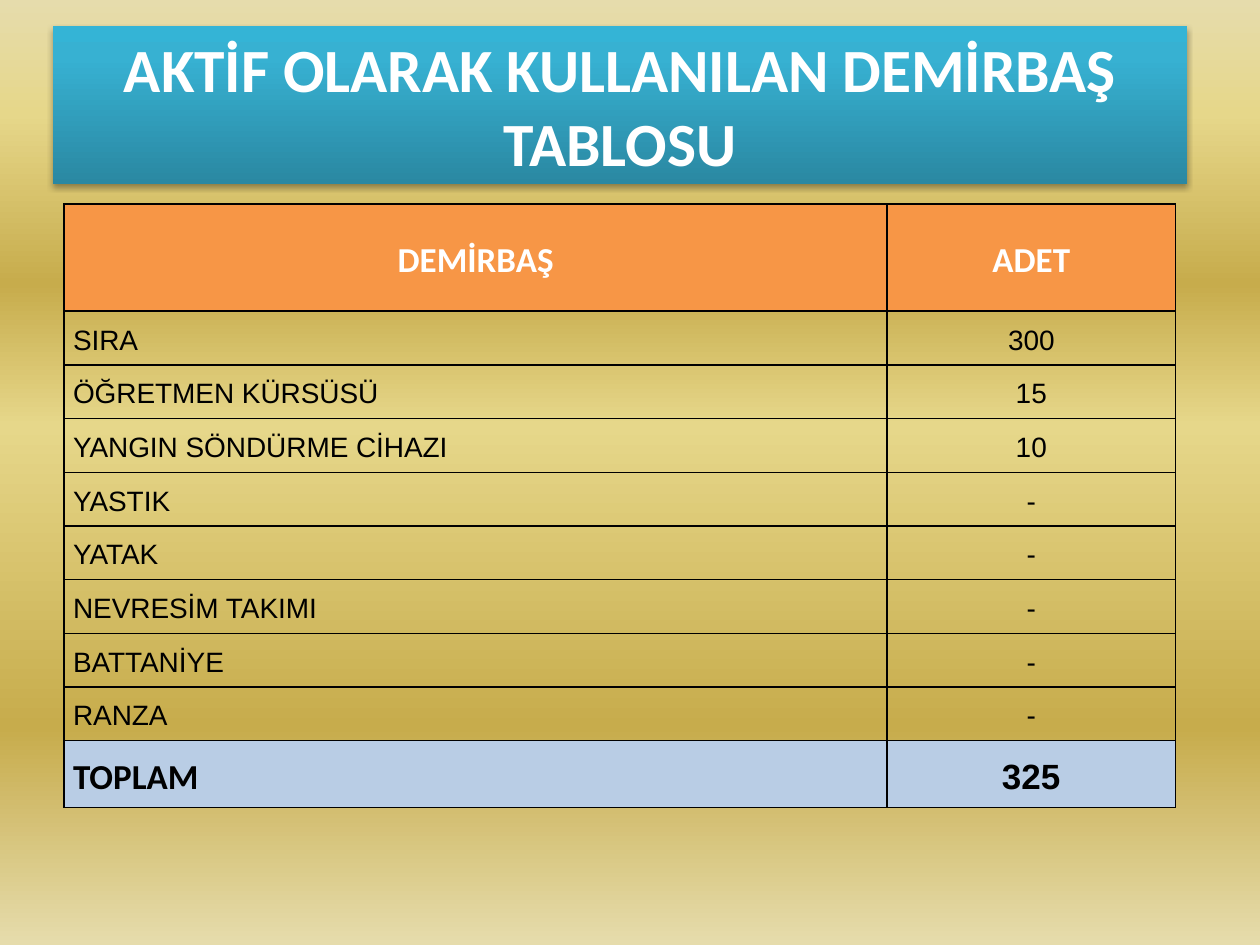
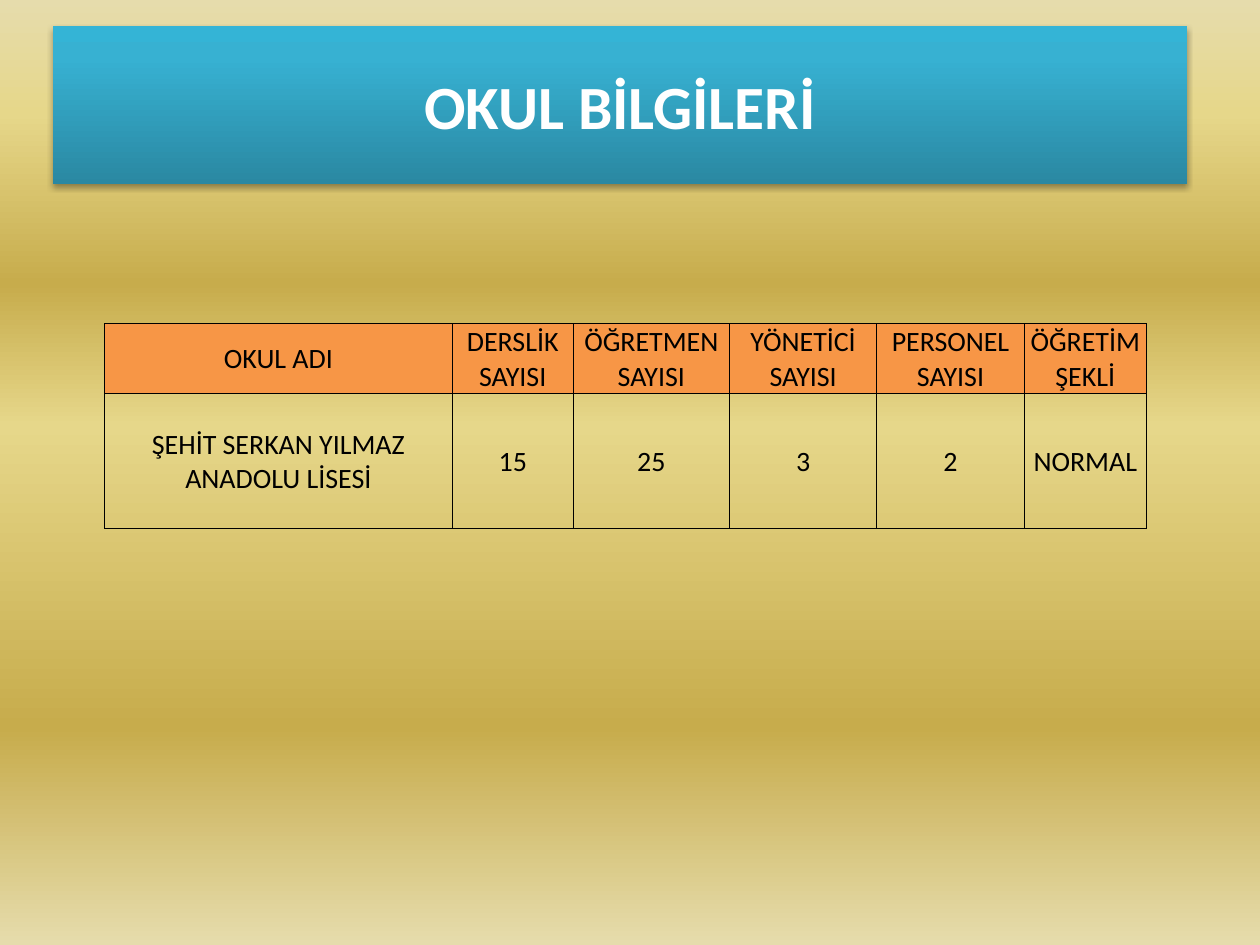
"""Build two slides of school inventory and school facts."""
from dataclasses import dataclass, replace
from typing import Optional

import pptx
import pptx.dml.color
import pptx.enum.shapes
import pptx.enum.text
import pptx.oxml.ns
import pptx.util
from lxml import etree

Inches = pptx.util.Inches
Pt = pptx.util.Pt
RGBColor = pptx.dml.color.RGBColor
Align = pptx.enum.text.PP_ALIGN
Middle = pptx.enum.text.MSO_ANCHOR.MIDDLE
qn = pptx.oxml.ns.qn

BLACK = RGBColor(0x00, 0x00, 0x00)
WHITE = RGBColor(0xFF, 0xFF, 0xFF)
ORANGE = RGBColor(0xF7, 0x96, 0x46)
PALE = RGBColor(0xB9, 0xCD, 0xE5)
CREAM = RGBColor(0xE6, 0xDC, 0xAC)
STRAW = RGBColor(0xE6, 0xD7, 0x8A)
GOLD = RGBColor(0xC7, 0xAC, 0x4C)
TEAL = RGBColor(0x2A, 0x88, 0xA2)
AQUA = RGBColor(0x37, 0xB1, 0xD2)
SKY = RGBColor(0x34, 0xB4, 0xD6)

BACK = [(0, CREAM), (12, STRAW), (30, GOLD), (45, STRAW), (77, GOLD), (100, CREAM)]
BAND = [(0, TEAL), (80, AQUA), (100, SKY)]


@dataclass(frozen=True)
class Look:
    """Style of a run of text and the cell around it."""
    size: float = 16
    font: str = "Calibri"
    bold: bool = False
    ink: RGBColor = BLACK
    fill: Optional[RGBColor] = None
    align: Align = Align.CENTER


@dataclass(frozen=True)
class Cell:
    """Text of one cell with its look."""
    text: str
    look: Look


@dataclass(frozen=True)
class Grid:
    """Place, sizes and content of a table."""
    left: float
    top: float
    cols: list[float]
    rows: list[float]
    cells: list[list[Cell]]
    rule: float
    pads: tuple[float, float, float, float]
    lead: float = 1.0


TITLE = Look(35.1, bold=True, ink=WHITE)
HEAD = Look(20, bold=True, ink=WHITE, fill=ORANGE)
COUNT = Look(font="Arial")
ITEM = replace(COUNT, align=Align.LEFT)
TOTAL = Look(20, bold=True, fill=PALE, align=Align.LEFT)
SUM = replace(TOTAL, font="Arial", align=Align.CENTER)
FACT = Look()
LABEL = replace(FACT, fill=ORANGE)

STOCK = [("SIRA", "300"), ("ÖĞRETMEN KÜRSÜSÜ", "15"), ("YANGIN SÖNDÜRME CİHAZI", "10"),
         ("YASTIK", "-"), ("YATAK", "-"), ("NEVRESİM TAKIMI", "-"),
         ("BATTANİYE", "-"), ("RANZA", "-")]
FACTS = [("OKUL ADI", "ŞEHİT SERKAN YILMAZ ANADOLU LİSESİ", 2.76),
         ("DERSLİK SAYISI", "15", 0.96), ("ÖĞRETMEN SAYISI", "25", 1.24),
         ("YÖNETİCİ SAYISI", "3", 1.17), ("PERSONEL SAYISI", "2", 1.17),
         ("ÖĞRETİM ŞEKLİ", "NORMAL", 0.97)]


def add_color(host: etree.ElementBase, color: RGBColor) -> etree.ElementBase:
    """Add an RGB colour node to a host node."""
    return etree.SubElement(host, qn("a:srgbClr"), val=str(color))


def set_blend(host: etree.ElementBase, stops: list[tuple[int, RGBColor]], angle: int) -> None:
    """Give the gradient found in a host its stops and angle."""
    grad = host.find(".//" + qn("a:gradFill"))
    holder = grad.find(qn("a:gsLst"))
    for old in list(holder):
        holder.remove(old)
    for place, color in stops:
        add_color(etree.SubElement(holder, qn("a:gs"), pos=str(place * 1000)), color)
    grad.find(qn("a:lin")).set("ang", str(angle * 60000))


def write(frame: pptx.text.text.TextFrame, text: str, look: Look, lead: float = 1.0) -> None:
    """Write one styled run into a text frame."""
    para = frame.paragraphs[0]
    para.alignment = look.align
    para.line_spacing = lead
    run = para.add_run()
    run.text = text
    run.font.size = Pt(look.size)
    run.font.name = look.font
    run.font.bold = look.bold
    run.font.color.rgb = look.ink


def add_page(deck: pptx.presentation.Presentation, title: str) -> pptx.slide.Slide:
    """Add a slide with the shared background and title band."""
    page = deck.slides.add_slide(deck.slide_layouts[6])
    page.background.fill.gradient()
    set_blend(page.background.element if hasattr(page.background, "element") else page.element,
              BACK, 90)
    band = page.shapes.add_shape(pptx.enum.shapes.MSO_SHAPE.RECTANGLE,
                                 Inches(0.42), Inches(0.21), Inches(9), Inches(1.25))
    band.fill.gradient()
    set_blend(band.element, BAND, 270)
    band.line.fill.background()
    band.shadow.inherit = False
    shade = etree.SubElement(band.element.spPr.find(qn("a:effectLst")), qn("a:outerShdw"),
                             blurRad=str(Pt(3.1)), dist=str(Pt(1.8)),
                             dir="5400000", rotWithShape="0")
    etree.SubElement(add_color(shade, BLACK), qn("a:alpha"), val="35000")
    band.text_frame.word_wrap = True
    band.text_frame.vertical_anchor = Middle
    write(band.text_frame, title, TITLE)
    return page


def add_rules(cell: pptx.table._Cell, width: float) -> None:
    """Draw a black border on all sides of a cell."""
    props = cell._tc.get_or_add_tcPr()
    for spot, side in enumerate("LRTB"):
        line = etree.Element(qn("a:ln" + side), w=str(Pt(width)))
        add_color(etree.SubElement(line, qn("a:solidFill")), BLACK)
        props.insert(spot, line)


def add_grid(page: pptx.slide.Slide, grid: Grid) -> None:
    """Draw a table from its grid."""
    table = page.shapes.add_table(len(grid.rows), len(grid.cols),
                                  Inches(grid.left), Inches(grid.top),
                                  Inches(sum(grid.cols)), Inches(sum(grid.rows))).table
    table.first_row = table.horz_banding = False
    for col, width in zip(table.columns, grid.cols):
        col.width = Inches(width)
    for row, height, cells in zip(table.rows, grid.rows, grid.cells):
        row.height = Inches(height)
        for box, cell in zip(row.cells, cells):
            box.margin_left, box.margin_top, box.margin_right, box.margin_bottom = map(
                Inches, grid.pads)
            box.vertical_anchor = Middle
            if cell.look.fill is None:
                box.fill.background()
            else:
                box.fill.solid()
                box.fill.fore_color.rgb = cell.look.fill
            add_rules(box, grid.rule)
            write(box.text_frame, cell.text, cell.look, grid.lead)


def main() -> None:
    """Build and save the deck."""
    deck = pptx.Presentation()
    deck.slide_width, deck.slide_height = Inches(10), Inches(7.5)

    stock = [[Cell("DEMİRBAŞ", HEAD), Cell("ADET", HEAD)]]
    stock += [[Cell(name, ITEM), Cell(count, COUNT)] for name, count in STOCK]
    stock.append([Cell("TOPLAM", TOTAL), Cell("325", SUM)])
    heights = [0.85] + [3.41 / len(STOCK)] * len(STOCK) + [0.53]
    add_grid(add_page(deck, "AKTİF OLARAK KULLANILAN DEMİRBAŞ TABLOSU"),
             Grid(0.51, 1.62, [6.53, 2.29], heights, stock, 1, (0.07, 0, 0.07, 0), 1.15))

    names, values, widths = zip(*FACTS)
    facts = [[Cell(name, LABEL) for name in names], [Cell(value, FACT) for value in values]]
    add_grid(add_page(deck, "OKUL BİLGİLERİ"),
             Grid(0.83, 2.57, list(widths), [0.55, 1.07], facts, 0.5, (0.01, 0.01, 0.01, 0)))

    deck.save("out.pptx")


if __name__ == "__main__":
    main()
